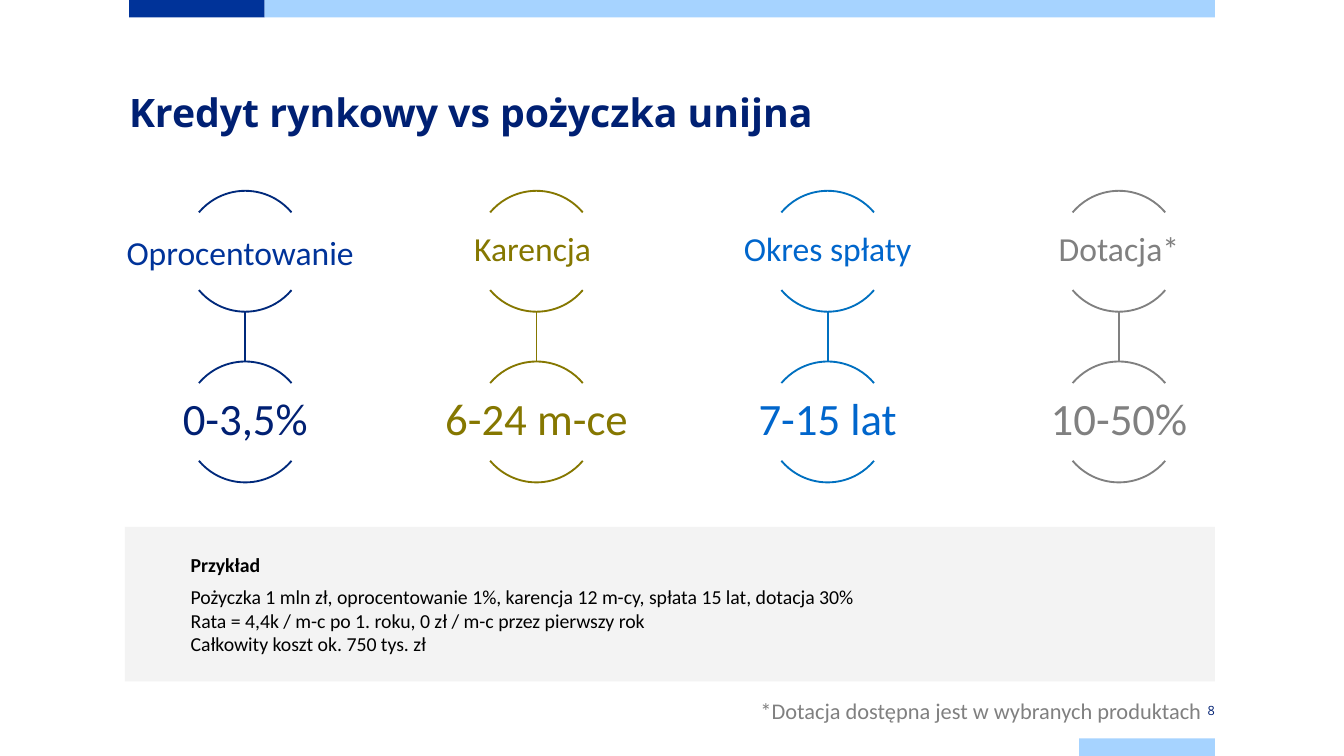
from dataclasses import dataclass
from lxml.etree import SubElement as Sub
from pptx import Presentation
from pptx.dml.color import RGBColor as Rgb
from pptx.enum.shapes import MSO_CONNECTOR as Conn, MSO_SHAPE as Kind
from pptx.enum.text import MSO_ANCHOR as Anchor, MSO_AUTO_SIZE as Fit, PP_ALIGN as Align
from pptx.oxml.ns import qn
from pptx.util import Inches, Pt


@dataclass(frozen=True)
class Theme:
    head: str = "Open Sans"
    body: str = "Calibri"
    navy: str = "002073"
    ink: str = "00297B"
    blue: str = "003399"
    pale: str = "A6D3FF"
    olive: str = "857700"
    azure: str = "0070C0"
    sky: str = "0066CC"
    gray: str = "808080"
    panel: str = "F2F2F2"
    black: str = "000000"
    title: float = 21
    value: float = 24
    label: float = 18
    note: float = 12
    text: float = 10.6
    page: float = 6.8
    line: float = 1


def assign(item, form):
    for key, val in form.items():
        setattr(item, key, val)


class Deck:
    cell = Inches(0.1)

    def __init__(self, theme, cols, rows):
        self.theme = theme
        self.file = Presentation()
        size = {"slide_width": self.span(cols), "slide_height": self.span(rows)}
        assign(self.file, size)
        self.slide = self.file.slides.add_slide(self.file.slide_layouts[5])
        self.shapes = self.slide.shapes

    def span(self, count):
        return round(count * self.cell)

    def area(self, spot):
        return [self.span(n) for n in spot]

    def frame(self, shape, inset, anchor):
        frame = shape.text_frame
        assign(frame, {"word_wrap": True, "vertical_anchor": anchor})
        if inset is not None:
            sides = ("left", "top", "right", "bottom")
            assign(frame, {f"margin_{s}": Inches(n) for s, n in zip(sides, inset)})
        return frame

    def run(self, para, text, size, color, face=None, bold=False):
        run = para.add_run()
        run.text = text
        form = {"size": Pt(size), "name": face or self.theme.body, "bold": bold}
        assign(run.font, form)
        run.font.color.rgb = Rgb.from_string(color)

    def title(self, spot, text):
        shape = self.shapes.title
        assign(shape, dict(zip(("left", "top", "width", "height"), self.area(spot))))
        frame = self.frame(shape, (0, 0, 0, 0), Anchor.TOP)
        frame.auto_size = Fit.NONE
        para = frame.paragraphs[0]
        assign(para, {"alignment": Align.LEFT, "line_spacing": Pt(24.5)})
        self.run(para, text, self.theme.title, self.theme.navy, self.theme.head, True)

    def text(self, spot, runs, form, inset=None, anchor=Anchor.MIDDLE):
        box = self.shapes.add_textbox(*self.area(spot))
        frame = self.frame(box, inset, anchor)
        para = frame.paragraphs[0]
        assign(para, form)
        for run in runs:
            self.run(para, *run)
        return frame

    def rect(self, spot, color, alpha=None):
        shape = self.shapes.add_shape(Kind.RECTANGLE, *self.area(spot))
        shape.shadow.inherit = False
        shape.fill.solid()
        shape.fill.fore_color.rgb = Rgb.from_string(color)
        shape.line.fill.background()
        if alpha:
            tint = shape.fill._xPr.find(".//" + qn("a:srgbClr"))
            Sub(tint, qn("a:alpha"), val=str(alpha * 1000))
        return shape

    def stroke(self, shape, color):
        shape.line.color.rgb = Rgb.from_string(color)
        shape.line.width = Pt(self.theme.line)

    def arcs(self, mid, top, size, color):
        for start, end in ((220, 320), (40, 140)):
            spot = self.area((mid - size / 2, top, size, size))
            arc = self.shapes.add_shape(Kind.ARC, *spot)
            arc.shadow.inherit = False
            arc.fill.background()
            for i, deg in enumerate((start, end)):
                arc.adjustments[i] = deg * 0.6
            self.stroke(arc, color)

    def link(self, mid, top, end, color):
        ends = self.area((mid, top, mid, end))
        line = self.shapes.add_connector(Conn.STRAIGHT, *ends)
        self.stroke(line, color)
        Sub(line._element.spPr, qn("a:effectLst"))

    def ring(self, mid, top, runs, color, inset):
        self.arcs(mid, top, 9, color)
        form = {"alignment": Align.CENTER, "line_spacing": 0.9}
        self.text((mid - 9, top + 1.6, 18, 5.7), runs, form, (inset,) * 4)

    def panel(self, spot, lines):
        shape = self.rect(spot, self.theme.panel, 87)
        frame = self.frame(shape, None, Anchor.MIDDLE)
        for i, line in enumerate(lines):
            para = frame.add_paragraph() if i else frame.paragraphs[0]
            form = {"alignment": Align.LEFT, "level": 1, "space_after": Pt(0 if i else 4.5)}
            assign(para, form)
            para._p.get_or_add_pPr().set("marL", str(Inches(0.39)))
            self.run(para, line, self.theme.text, self.theme.black, bold=not i)


def main():
    look = Theme()
    deck = Deck(look, 100, 56.25)
    left, right = 9.6, 90.4
    tab, bar = 10.1, 1.3
    deck.rect((left, 0, tab, bar), look.blue)
    deck.rect((left + tab, 0, right - left - tab, bar), look.pale)
    deck.rect((right - tab, 54.95, tab, bar), look.pale)
    deck.title((left, 6.7, right - left, 8), "Kredyt rynkowy vs pożyczka unijna")
    deck.text((right - tab, 52.2, tab, bar), [("8", look.page, look.navy, look.head)],
              {"alignment": Align.RIGHT}, (0, 0.08, 0, 0.08))

    terms = [
        ("Oprocentowanie", "0-3,5%", look.ink, look.blue, look.navy),
        ("Karencja ", "6-24 m-ce", look.olive, look.olive, look.olive),
        ("Okres spłaty", "7-15 lat", look.azure, look.sky, look.sky),
        ("Dotacja*", "10-50%", look.gray, look.gray, look.gray),
    ]
    for i, (name, value, line, tone, hue) in enumerate(terms):
        mid = 18.25 + 21.67 * i
        deck.link(mid, 23.2, 26.9, line)
        names = [(name, look.label, tone)]
        if not i:
            names.append((" ", look.value, look.black))
        deck.ring(mid, 14.2, names, line, 0.01)
        deck.ring(mid, 26.9, [(value, look.value, hue)], line, 0.02)

    deck.panel((9.3, 39.2, 81.1, 11.5), [
        "Przykład",
        "Pożyczka 1 mln zł, oprocentowanie 1%, karencja 12 m-cy, spłata 15 lat, dotacja 30%",
        "Rata = 4,4k / m-c po 1. roku, 0 zł / m-c przez pierwszy rok",
        "Całkowity koszt ok. 750 tys. zł",
    ])
    note = "*Dotacja dostępna jest w wybranych produktach"
    frame = deck.text((47.4, 51.4, 43, 3), [(note, look.note, look.gray)],
                      {"alignment": Align.RIGHT}, anchor=Anchor.TOP)
    frame.auto_size = Fit.SHAPE_TO_FIT_TEXT
    deck.file.save("out.pptx")


if __name__ == "__main__":
    main()
